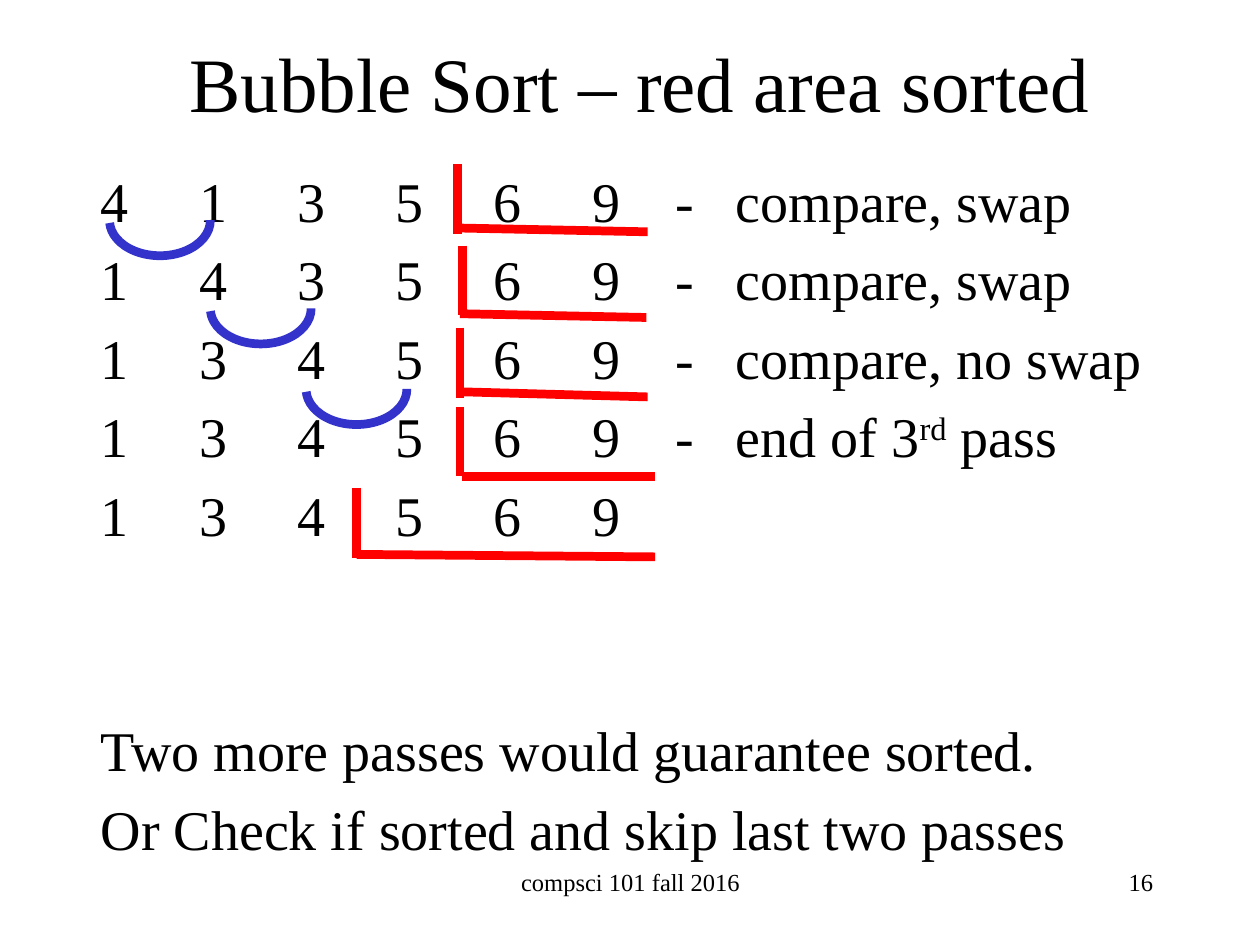
from pptx import Presentation
from pptx.dml.color import RGBColor
from pptx.enum.shapes import MSO_CONNECTOR, MSO_SHAPE
from pptx.enum.text import MSO_ANCHOR, MSO_AUTO_SIZE, PP_ALIGN
from pptx.oxml.ns import qn
from pptx.util import Inches, Pt
from lxml.etree import SubElement

COLORS = {"text": "000000", "swap": "3333CC", "sorted": "FF0000"}
FONT = "Times New Roman"
MARK_WIDTH = Pt(5)

# Tab stops in inches: five more numbers, the dash, the remark
TAB_STOPS = [round(0.78 * column, 2) for column in range(1, 6)] + [4.56, 5.04]
PASSES = [
    ("413569", "compare, swap"),
    ("143569", "compare, swap"),
    ("134569", "compare, no swap"),
    ("134569", "end of 3"),
    ("134569", None),
]
CONCLUSIONS = [
    "Two more passes would guarantee sorted.",
    "Or Check if sorted and skip last two passes",
]

# Marks are offsets in inches from the corner of the trace
SWAP_ARCS = [(0.17, 0.2), (0.97, 0.9), (1.73, 1.54)]
# Upright x, top, bottom; base left x, left y, right x, right y
SORTED_CORNERS = [
    (2.93, 0.03, 0.59, 2.95, 0.54, 4.44, 0.57),
    (2.97, 0.68, 1.23, 2.95, 1.22, 4.43, 1.25),
    (2.95, 1.33, 1.89, 2.97, 1.84, 4.44, 1.88),
    (2.95, 1.96, 2.51, 2.97, 2.51, 4.5, 2.51),
    (2.13, 2.6, 3.16, 2.13, 3.13, 4.5, 3.15),
]


def color(key):
    return RGBColor.from_string(COLORS[key])


def place(shape, box):
    shape.left, shape.top, shape.width, shape.height = map(Inches, box)


def style(paragraph, size, align):
    paragraph.alignment = align
    paragraph.font.name = FONT
    paragraph.font.size = Pt(size)
    paragraph.font.color.rgb = color("text")


def clear_master_bullets(master):
    """Drop bullet and indent in the master, as an indent disables tab stops."""
    level = next(master.element.iter(qn("p:bodyStyle"))).find(qn("a:lvl1pPr"))
    level.set("marL", "0")
    level.attrib.pop("indent", None)
    level.remove(level.find(qn("a:buFont")))
    bullet = level.find(qn("a:buChar"))
    bullet.addprevious(SubElement(level, qn("a:buNone")))
    level.remove(bullet)


def add_title(slide, box):
    title = slide.shapes.title
    place(title, box)
    title.text_frame.text = "Bubble Sort – red area sorted"
    title.text_frame.vertical_anchor = MSO_ANCHOR.MIDDLE
    style(title.text_frame.paragraphs[0], 44, PP_ALIGN.CENTER)


def set_tab_stops(paragraph):
    props = paragraph._p.get_or_add_pPr()
    tabs = SubElement(props, qn("a:tabLst"))
    for stop in TAB_STOPS:
        SubElement(tabs, qn("a:tab"), pos=str(int(Inches(stop))), algn="l")
    props.find(qn("a:defRPr")).addprevious(tabs)


def add_trace(slide, box):
    body = slide.placeholders[1]
    place(body, box)
    frame = body.text_frame
    frame.auto_size = MSO_AUTO_SIZE.NONE
    frame.vertical_anchor = MSO_ANCHOR.TOP
    rows = ["\t".join([*numbers, "-", remark] if remark else numbers)
            for numbers, remark in PASSES]
    frame.text = "\n".join(rows + CONCLUSIONS)
    for paragraph in frame.paragraphs:
        style(paragraph, 32, PP_ALIGN.LEFT)
        paragraph.space_before = Pt(6.4)
    for paragraph in frame.paragraphs[:len(PASSES)]:
        set_tab_stops(paragraph)
    frame.paragraphs[len(PASSES)].space_before = Pt(96.3)

    last_pass = frame.paragraphs[3]
    ordinal = last_pass.add_run()
    ordinal.text = "rd"
    ordinal.font._element.set("baseline", "30000")
    last_pass.add_run().text = " pass"


def add_swap_arc(slide, left, top):
    arc = slide.shapes.add_shape(MSO_SHAPE.ARC, Inches(left), Inches(top),
                                 Inches(0.8), Inches(0.56))
    arc.adjustments[0] = 215.73
    arc.adjustments[1] = 106.31
    arc.shadow.inherit = False
    arc.fill.background()
    arc.line.color.rgb = color("swap")
    arc.line.width = MARK_WIDTH


def add_sorted_line(slide, *ends):
    line = slide.shapes.add_connector(MSO_CONNECTOR.STRAIGHT, *map(Inches, ends))
    line.line.color.rgb = color("sorted")
    line.line.width = MARK_WIDTH
    SubElement(line._element.spPr, qn("a:effectLst"))


def add_marks(slide, box):
    left, top = box[:2]
    for x, y in SWAP_ARCS:
        add_swap_arc(slide, left + x, top + y)
    for x, y1, y2, base_x1, base_y1, base_x2, base_y2 in SORTED_CORNERS:
        add_sorted_line(slide, left + x, top + y1, left + x, top + y2)
        add_sorted_line(slide, left + base_x2, top + base_y2,
                        left + base_x1, top + base_y1)


def add_footer(slide, box, text, align):
    footer = slide.shapes.add_textbox(*map(Inches, box)).text_frame
    footer.word_wrap = True
    footer.text = text
    style(footer.paragraphs[0], 14, align)


def main():
    deck = Presentation()
    deck.slide_width, deck.slide_height = Inches(10), Inches(7.5)
    clear_master_bullets(deck.slide_master)
    slide = deck.slides.add_slide(deck.slide_layouts[1])
    trace_box = (0.7, 1.27, 9, 5.92)
    add_title(slide, (0.83, 0.02, 8.5, 1.25))
    add_trace(slide, trace_box)
    add_marks(slide, trace_box)
    add_footer(slide, (3.42, 6.83, 3.17, 0.5), "compsci 101 fall 2016", PP_ALIGN.CENTER)
    add_footer(slide, (7.17, 6.83, 2.08, 0.5), "16", PP_ALIGN.RIGHT)
    deck.save("out.pptx")


if __name__ == "__main__":
    main()
